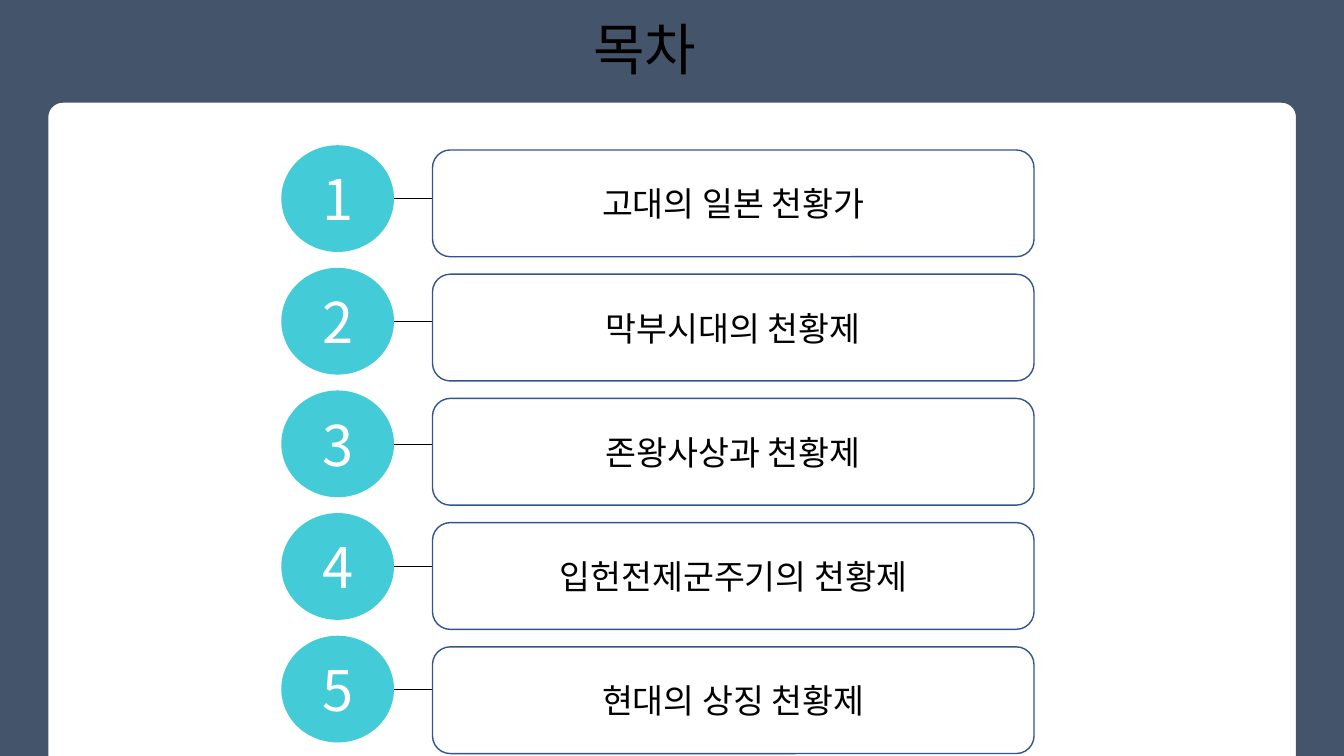
from math import cos, radians, sin

from lxml.etree import SubElement
from pptx import Presentation
from pptx.dml.color import RGBColor
from pptx.enum.shapes import MSO_CONNECTOR, MSO_SHAPE
from pptx.enum.text import MSO_ANCHOR, MSO_AUTO_SIZE, PP_ALIGN
from pptx.oxml.ns import qn
from pptx.util import Cm, Pt

FONT = "Noto Sans CJK KR"
COLORS = {
    "frame": "44546A",
    "circle": "43CBD7",
    "border": "325491",
    "white": "FFFFFF",
    "black": "000000",
}
CHAPTERS = [
    "고대의 일본 천황가",
    "막부시대의 천황제",
    "존왕사상과 천황제",
    "입헌전제군주기의 천황제",
    "현대의 상징 천황제",
]
SLIDE_WIDTH, SLIDE_HEIGHT = 33.87, 19.05
PANEL_LEFT, PANEL_TOP, PANEL_RIGHT, PANEL_RADIUS = 1.22, 2.59, 32.66, 0.36
CIRCLE_LEFT, CIRCLE_TOP, CIRCLE_WIDTH, CIRCLE_PITCH = 7.09, 3.66, 2.84, 3.09
BOX_LEFT, BOX_TOP, BOX_WIDTH, BOX_PITCH = 10.9, 3.78, 15.16, 3.13
ROW_HEIGHT = 2.69


def color(name):
    """Return the named colour."""
    return RGBColor.from_string(COLORS[name])


def set_attributes(target, values):
    """Set each attribute in values on the target."""
    for name, value in values.items():
        setattr(target, name, value)


def write_text(shape, text, size, color_name, anchor=MSO_ANCHOR.MIDDLE):
    """Write one centred line of text in the shape."""
    frame = shape.text_frame
    set_attributes(frame, {"word_wrap": True, "vertical_anchor": anchor})
    para = frame.paragraphs[0]
    para.alignment = PP_ALIGN.CENTER
    span = para.add_run()
    span.text = text
    set_attributes(span.font, {"name": FONT, "size": Pt(size)})
    span.font.color.rgb = color(color_name)
    SubElement(span.font._element, qn("a:ea"), typeface=FONT)


def paint(shape, fill, border=None):
    """Give the shape a flat fill and an optional thin border."""
    shape.shadow.inherit = False
    shape.fill.solid()
    shape.fill.fore_color.rgb = color(fill)
    if border:
        shape.line.color.rgb = color(border)
        shape.line.width = Pt(1)
    else:
        shape.line.fill.background()


def corner(center_x, center_y, start):
    """Return the points of a quarter circle, clockwise backwards from start."""
    angles = [radians(start + step) for step in range(0, 91, 10)]
    return [
        (center_x + PANEL_RADIUS * cos(angle), center_y - PANEL_RADIUS * sin(angle))
        for angle in angles
    ]


def add_frame(page):
    """Draw the dark surround with rounded upper inner corners."""
    center_y = PANEL_TOP + PANEL_RADIUS
    points = [
        (SLIDE_WIDTH, 0),
        (SLIDE_WIDTH, SLIDE_HEIGHT),
        (PANEL_RIGHT, SLIDE_HEIGHT),
        *corner(PANEL_RIGHT - PANEL_RADIUS, center_y, 0),
        *corner(PANEL_LEFT + PANEL_RADIUS, center_y, 90),
        (PANEL_LEFT, SLIDE_HEIGHT),
        (0, SLIDE_HEIGHT),
    ]
    builder = page.shapes.build_freeform(0, 0)
    builder.add_line_segments([(Cm(x), Cm(y)) for x, y in points], close=True)
    surround = builder.convert_to_shape()
    paint(surround, "frame")
    page.shapes.title.element.addprevious(surround.element)


def add_title(page, text):
    """Place and format the title placeholder."""
    title = page.shapes.title
    position = {"left": Cm(7.52), "top": Cm(0.23), "width": Cm(17.45), "height": Cm(1.96)}
    set_attributes(title, position)
    title.text_frame.auto_size = MSO_AUTO_SIZE.NONE
    write_text(title, text, 40, "black", MSO_ANCHOR.TOP)


def add_label(page, kind, left, top, width, text, size, text_color, fill, border=None):
    """Add a filled shape holding one line of text."""
    shape = page.shapes.add_shape(kind, Cm(left), Cm(top), Cm(width), Cm(ROW_HEIGHT))
    paint(shape, fill, border)
    write_text(shape, text, size, text_color)


def add_link(page, y):
    """Add the thin line from a circle to its box."""
    link = page.shapes.add_connector(
        MSO_CONNECTOR.STRAIGHT, Cm(CIRCLE_LEFT + CIRCLE_WIDTH), Cm(y), Cm(BOX_LEFT), Cm(y)
    )
    link.line.color.rgb = color("black")
    link.line.width = Pt(0.5)
    SubElement(link.element.spPr, qn("a:effectLst"))


def add_chapter(page, index, text):
    """Add one numbered row of the contents."""
    circle_top = CIRCLE_TOP + index * CIRCLE_PITCH
    add_label(page, MSO_SHAPE.OVAL, CIRCLE_LEFT, circle_top, CIRCLE_WIDTH,
              str(index + 1), 40, "white", "circle")
    add_link(page, circle_top + ROW_HEIGHT / 2)
    add_label(page, MSO_SHAPE.ROUNDED_RECTANGLE, BOX_LEFT, BOX_TOP + index * BOX_PITCH,
              BOX_WIDTH, text, 24, "black", "white", "border")


def main():
    """Build the contents slide and save it."""
    deck = Presentation()
    set_attributes(deck, {"slide_width": Cm(SLIDE_WIDTH), "slide_height": Cm(SLIDE_HEIGHT)})
    page = deck.slides.add_slide(deck.slide_layouts[5])
    add_frame(page)
    add_title(page, "목차")
    for index, text in enumerate(CHAPTERS):
        add_chapter(page, index, text)
    deck.save("out.pptx")


if __name__ == "__main__":
    main()
